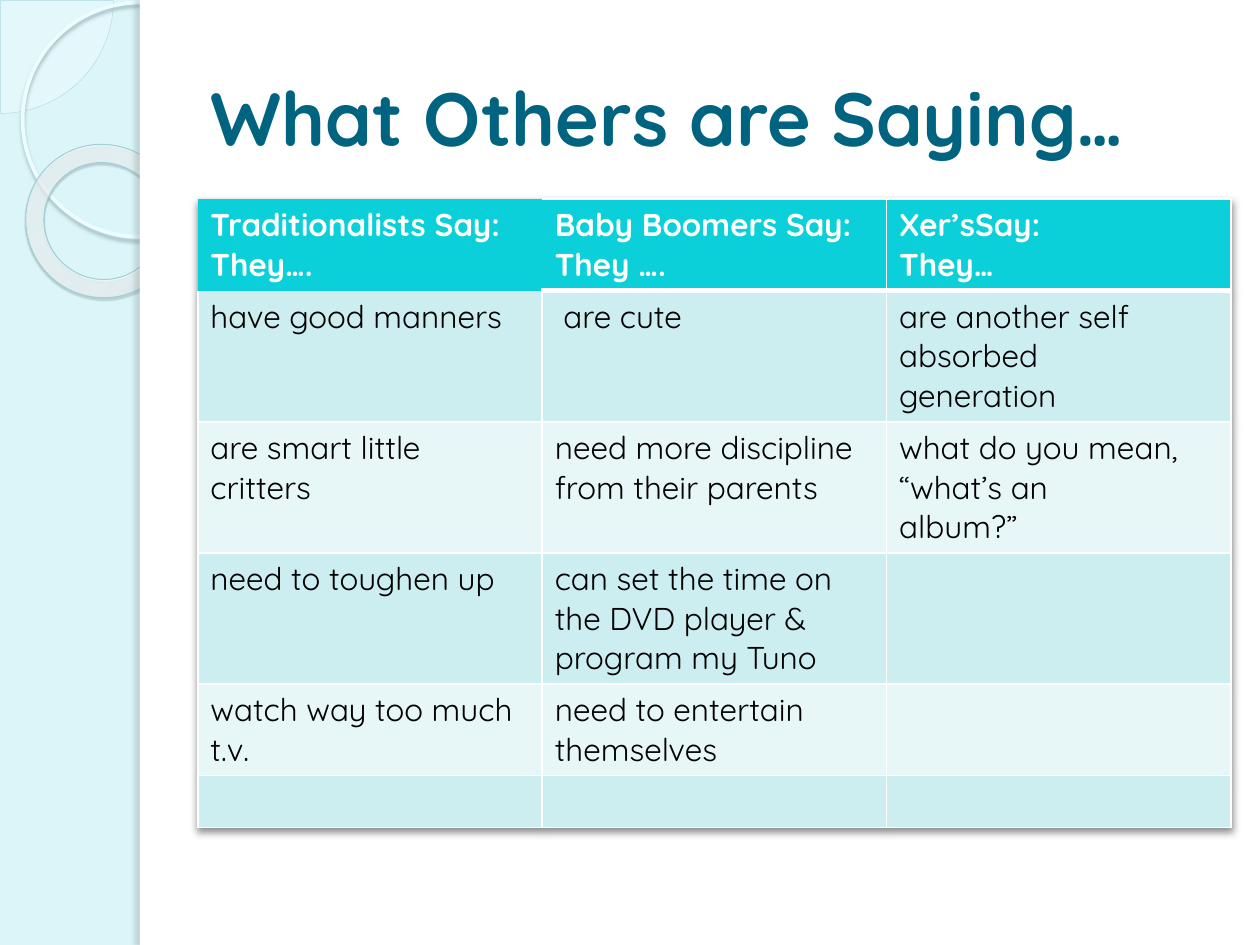
from lxml import etree
from pptx import Presentation
from pptx.dml.color import RGBColor
from pptx.enum.dml import MSO_THEME_COLOR
from pptx.enum.shapes import MSO_SHAPE
from pptx.enum.text import MSO_ANCHOR, MSO_AUTO_SIZE, PP_ALIGN
from pptx.oxml import parse_xml
from pptx.oxml.ns import nsdecls, qn
from pptx.util import Inches, Pt

PIE, OVAL, DONUT, RECT = MSO_SHAPE.PIE, MSO_SHAPE.OVAL, MSO_SHAPE.DONUT, MSO_SHAPE.RECTANGLE
MIDDLE, LEFT, NO_FIT = MSO_ANCHOR.MIDDLE, PP_ALIGN.LEFT, MSO_AUTO_SIZE.NONE

FONT = "Quicksand"
PALE_BLUE = RGBColor(0xDB, 0xF5, 0xF9)
WHITE = RGBColor(0xFF, 0xFF, 0xFF)
BLACK = RGBColor(0, 0, 0)
DEEP_TEAL = RGBColor(0x00, 0x63, 0x7F)
TURQUOISE = RGBColor(0x0B, 0xD0, 0xD9)
BANDS = (RGBColor(0xCC, 0xEE, 0xF1), RGBColor(0xE7, 0xF7, 0xF8))
PIE_FILL = RGBColor(0xF8, 0xFE, 0xFF)
PIE_LINE = RGBColor(0xAF, 0xDB, 0xE2)
RING_LINE = RGBColor(0xED, 0xFC, 0xFF)
RING_SHADOW = RGBColor(0x9C, 0xB9, 0xBE)
DONUT_LINE = RGBColor(0xA1, 0xCF, 0xD6)
DONUT_SHADOW = RGBColor(0x4B, 0x5E, 0x61)
DONUT_STOPS = ((0, RGBColor(0xF9, 0xFE, 0xFF), 70),
               (70, RGBColor(0xFD, 0xFF, 0xFF), 55),
               (100, RGBColor(0x9E, 0xF2, 0xFF), 60))
EDGE_SHADOW = RGBColor(0x6C, 0x7A, 0x7C)

SAYINGS = [
    ("Traditionalists Say:\nThey….", "Baby Boomers Say:\nThey ….", "Xer’sSay:\nThey…"),
    ("have good manners", " are cute", "are another self\nabsorbed\ngeneration"),
    ("are smart little\ncritters", "need more discipline\nfrom their parents",
     "what do you mean,\n“what’s an\nalbum?”"),
    ("need to toughen up", "can set the time on the DVD player &\nprogram my Tuno", ""),
    ("watch way too much t.v.", "need to entertain\nthemselves", ""),
    ("", "", ""),
]


def color_xml(color, alpha):
    return f'<a:srgbClr val="{color}"><a:alpha val="{alpha * 1000}"/></a:srgbClr>'


def shadow_xml(color, alpha, blur, distance, angle):
    return parse_xml(
        f'<a:effectLst {nsdecls("a")}><a:outerShdw blurRad="{Pt(blur)}" dist="{Pt(distance)}" '
        f'dir="{angle * 60000}" algn="tl" rotWithShape="0">{color_xml(color, alpha)}'
        '</a:outerShdw></a:effectLst>')


def add_ornament(slide, kind, box, fill=None, line=None, width=0, shadow=None):
    shape = slide.shapes.add_shape(kind, *(Inches(v) for v in box))
    shape.shadow.inherit = False
    if fill is None:
        shape.fill.background()
    else:
        shape.fill.solid()
        shape.fill.fore_color.rgb = fill
    if line is None:
        shape.line.fill.background()
    else:
        shape.line.color.rgb = line
        shape.line.width = Pt(width)
    if shadow:
        properties = shape.element.spPr
        properties.replace(properties.find(qn("a:effectLst")), shadow_xml(*shadow))
    return shape


def add_side_band(slide, left, top, width, height):
    corner = add_ornament(slide, PIE, (left - 0.89, top - 0.89, 1.79, 1.79),
                          PIE_FILL, PIE_LINE, 0.25)
    corner.adjustments[0] = 0
    corner.adjustments[1] = 54.02
    corner_color = corner.element.spPr.find(qn("a:solidFill"))[0]
    etree.SubElement(corner_color, qn("a:alpha")).set("val", "33000")

    add_ornament(slide, OVAL, (left + 0.18, top + 0.02, 1.86, 1.86), line=RING_LINE,
                 width=2.15, shadow=(RING_SHADOW, 85, 2, 2, 90))

    donut = add_ornament(slide, DONUT, (left + 0.2, top + 1.15, 1.23, 1.21), WHITE,
                         DONUT_LINE, 0.58, (DONUT_SHADOW, 35, 1, 1.2, 75))
    donut.rotation = 38.6
    donut.adjustments[0] = 0.12
    stops = "".join(f'<a:gs pos="{at * 1000}">{color_xml(color, alpha)}</a:gs>'
                    for at, color, alpha in DONUT_STOPS)
    gradient = parse_xml(
        f'<a:gradFill {nsdecls("a")} rotWithShape="1"><a:gsLst>{stops}</a:gsLst>'
        '<a:path path="circle"><a:fillToRect l="-408000" t="-50000" r="508000" b="150000"/>'
        '</a:path></a:gradFill>')
    properties = donut.element.spPr
    properties.replace(properties.find(qn("a:solidFill")), gradient)

    add_ornament(slide, RECT, (left + width, top, 10 - width, height), WHITE)
    return add_ornament(slide, RECT, (left + width, top, 0.08, height), WHITE,
                        shadow=(EDGE_SHADOW, 25, 3, 3, 180))


def style_text(frame, size, color, bold):
    for paragraph in frame.paragraphs:
        paragraph.alignment = LEFT
        for run in paragraph.runs:
            run.font.name = FONT
            run.font.size = Pt(size)
            run.font.bold = bold
            run.font.color.rgb = color


def place_title(slide, left, top, width, height):
    title = slide.shapes.title
    title.left, title.top = Inches(left), Inches(top)
    title.width, title.height = Inches(width), Inches(height)
    frame = title.text_frame
    frame.text = "What Others are Saying…"
    frame.word_wrap = True
    frame.auto_size = NO_FIT
    frame.vertical_anchor = MIDDLE
    style_text(frame, 43, DEEP_TEAL, True)
    return title


def set_borders(cell, widths):
    properties = cell._tc.get_or_add_tcPr()
    for index, (side, width) in enumerate(widths.items()):
        paint = f'<a:solidFill><a:srgbClr val="{WHITE}"/></a:solidFill>' if width else "<a:noFill/>"
        properties.insert(index, parse_xml(
            f'<a:ln{side} {nsdecls("a")} w="{Pt(width)}">{paint}</a:ln{side}>'))


def add_sayings_table(slide, left, top, width, height):
    box = [Inches(v) for v in (left, top, width, height)]
    table_frame = slide.shapes.add_table(len(SAYINGS), len(SAYINGS[0]), *box)
    table = table_frame.table
    table._tbl.tblPr.insert(0, shadow_xml(BLACK, 45, 4, 2.5, 90))
    for r, sayings in enumerate(SAYINGS):
        table.rows[r].height = Inches(0.41)
        header = r == 0
        for c, saying in enumerate(sayings):
            cell = table.cell(r, c)
            cell.text_frame.text = saying
            style_text(cell.text_frame, 18, WHITE if header else BLACK, header)
            cell.fill.solid()
            cell.fill.fore_color.rgb = TURQUOISE if header else BANDS[(r - 1) % 2]
            borders = {"L": 1, "R": 1, "T": 1, "B": 3 if header else 1}
            if header and c == 0:
                borders = dict.fromkeys(borders, 0)
            elif header and c == 1:
                borders["L"] = 0
            elif r == 1:
                borders["T"] = 0 if c == 0 else 3
            set_borders(cell, borders)
    table_frame.height = Inches(height)


def main():
    deck = Presentation()
    deck.slide_width, deck.slide_height = Inches(10), Inches(7.5)
    slide = deck.slides.add_slide(deck.slide_layouts[5])
    slide.background.fill.solid()
    slide.background.fill.fore_color.rgb = PALE_BLUE
    band_edge = add_side_band(slide, 0, 0, 1.11, 7.5)
    title = place_title(slide, 1.57, 0.3, 8.2, 1.25)
    band_edge.element.addnext(title.element)
    add_sayings_table(slide, 1.57, 1.58, 8.2, 4.81)
    deck.save("out.pptx")


if __name__ == "__main__":
    main()
